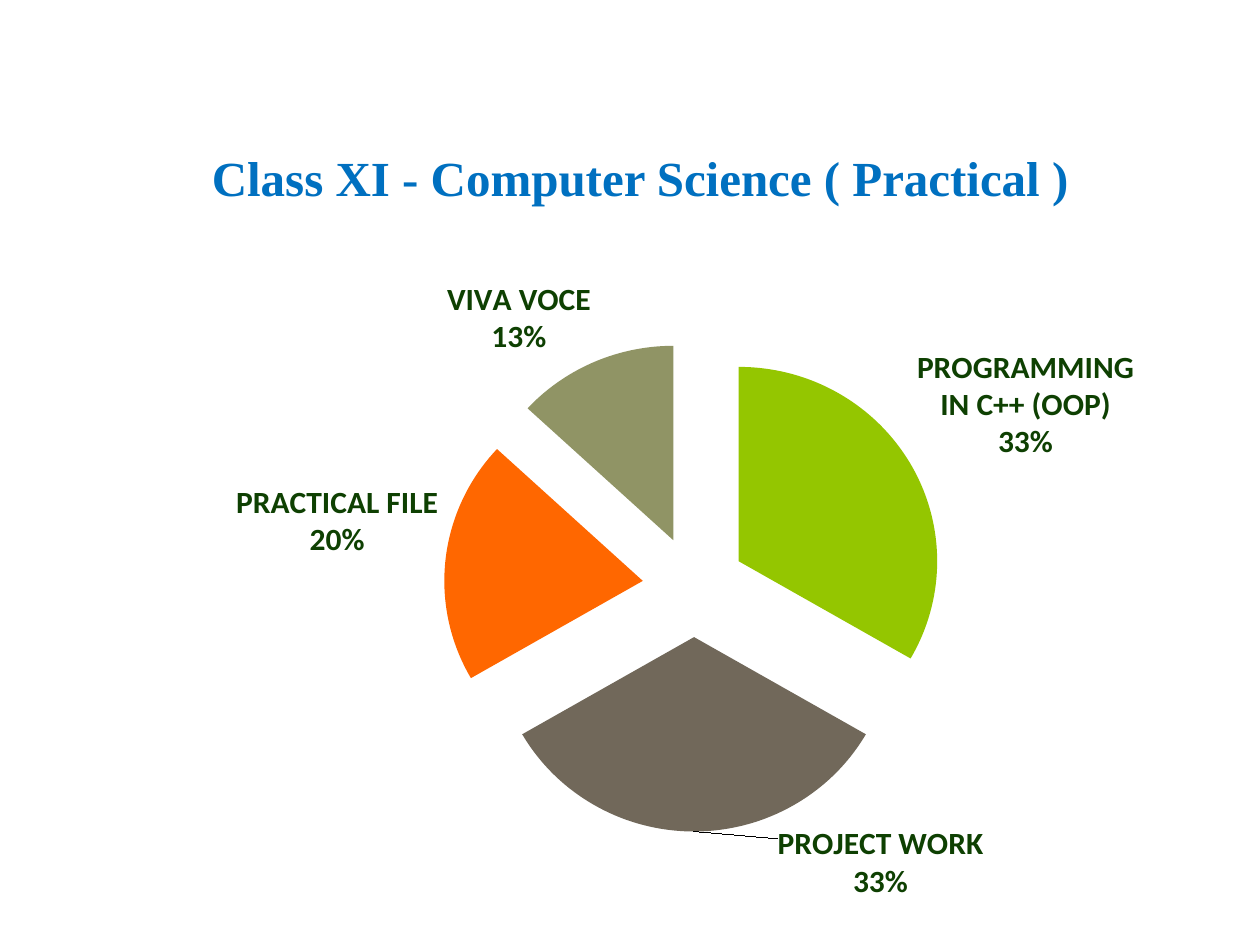
from lxml import etree
from pptx import Presentation
from pptx.chart.data import CategoryChartData
from pptx.dml.color import RGBColor
from pptx.enum.chart import XL_CHART_TYPE as ChartType, XL_LABEL_POSITION as LabelPosition
from pptx.enum.text import MSO_ANCHOR as Anchor, PP_ALIGN as Align
from pptx.oxml import parse_xml
from pptx.oxml.ns import nsdecls, qn
from pptx.util import Inches, Pt

COLORS = {"title": "0070C0", "label": "0E4002", "text": "000000"}
MARKS = {
    "PROGRAMMING IN C++ (OOP)": (33, "94C600"),
    "PROJECT WORK": (33, "71685A"),
    "PRACTICAL FILE": (20, "FF6700"),
    "VIVA VOCE": (13, "909465"),
}


def format_font(font, name="Calibri", size=18, color="text", bold=False):
    font.name, font.size, font.bold = name, Pt(size), bold
    font.color.rgb = RGBColor.from_string(COLORS[color])


def write_text(shape, text, align=Align.CENTER, **font_format):
    frame = shape.text_frame
    frame.word_wrap = False
    frame.vertical_anchor = Anchor.MIDDLE
    para = frame.paragraphs[0]
    para.alignment = align
    span = para.add_run()
    span.text = text
    format_font(span.font, **font_format)


def manual_layout(target="", **places):
    """Return a c:layout element with the given fractions of the chart."""
    inner = ""
    if target:
        inner = (f'<c:layoutTarget val="{target}"/>'
                 '<c:xMode val="edge"/><c:yMode val="edge"/>')
    inner += "".join(f'<c:{key} val="{value}"/>' for key, value in places.items())
    return parse_xml(f'<c:layout {nsdecls("c")}><c:manualLayout>{inner}'
                     "</c:manualLayout></c:layout>")


def show_category_and_percent(element):
    for tag, shown in (("Val", 0), ("CatName", 1), ("Percent", 1)):
        element.find(qn(f"c:show{tag}")).set("val", str(shown))
    separator = etree.Element(qn("c:separator"))
    separator.text = "\n"
    last = element.find(qn("c:showBubbleSize"))
    if last is None:
        last = element.find(qn("c:showPercent"))
    last.addnext(separator)


def add_title(page, left, top, width, height):
    title = page.shapes.title
    title.left, title.top, title.width, title.height = left, top, width, height
    write_text(title, "Class XI - Computer Science ( Practical )",
               name="Times New Roman", size=28, color="title", bold=True)


def add_marks_pie(page, left, top, width, height):
    data = CategoryChartData()
    data.categories = list(MARKS)
    data.add_series("Series 1", [value for value, _ in MARKS.values()])
    chart = page.shapes.add_chart(ChartType.PIE, left, top, width, height, data).chart
    chart.has_legend = chart.has_title = False
    format_font(chart.font, size=10)

    plot = chart.plots[0]
    plot.vary_by_categories = True
    area = chart.element.find(".//" + qn("c:plotArea"))
    for old in area.findall(qn("c:layout")):
        area.remove(old)
    area.insert(0, manual_layout("inner", x=0.083, y=0.135, w=0.917, h=0.759))

    series = plot.series[0]
    series_element = area.find(".//" + qn("c:ser"))
    for old in series_element.findall(qn("c:explosion")):
        series_element.remove(old)
    explosion = parse_xml(f'<c:explosion {nsdecls("c")} val="26"/>')
    series_element.find(qn("c:tx")).addnext(explosion)
    for index, (_, color) in enumerate(MARKS.values()):
        fill = series.points[index].format.fill
        fill.solid()
        fill.fore_color.rgb = RGBColor.from_string(color)

    labels = series.data_labels
    project_label = series.points[list(MARKS).index("PROJECT WORK")].data_label
    for label in (labels, project_label):
        label.position = LabelPosition.OUTSIDE_END
        format_font(label.font, color="label", bold=True)

    group = series_element.find(qn("c:dLbls"))
    moved = group.find(qn("c:dLbl"))
    moved.find(qn("c:idx")).addnext(manual_layout(x=0.16, y=0))
    for element in (group, moved):
        show_category_and_percent(element)


def main():
    deck = Presentation()
    deck.slide_width, deck.slide_height = Inches(10), Inches(7.5)
    page = deck.slides.add_slide(deck.slide_layouts[5])
    add_marks_pie(page, Inches(0.5), Inches(2.02), Inches(9.25), Inches(5.23))
    add_title(page, Inches(1.54), Inches(1.12), Inches(7.08), Inches(0.57))
    deck.save("out.pptx")


if __name__ == "__main__":
    main()
